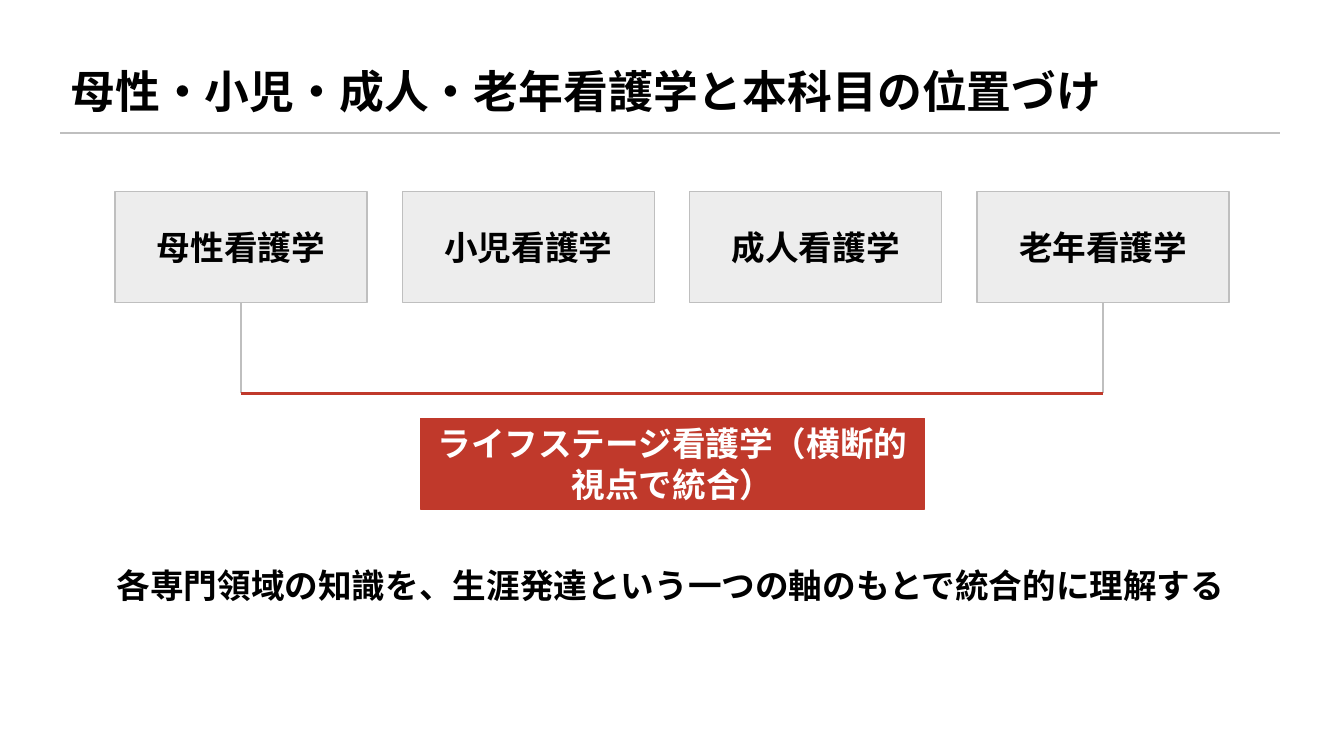
from dataclasses import dataclass

import pptx
import pptx.dml.color
import pptx.enum.shapes
import pptx.enum.text
import pptx.oxml
import pptx.oxml.ns
import pptx.util
from pptx.util import Inches


@dataclass(frozen=True)
class Theme:
    font: str = "Noto Sans CJK JP"
    ink: str = "000000"
    paper: str = "FFFFFF"
    panel: str = "EDEDED"
    rule: str = "BFBFBF"
    accent: str = "C0392B"
    title_size: int = 32
    body_size: int = 24
    thin: int = 1
    thick: int = 2


THEME = Theme()
FIELDS = ["母性看護学", "小児看護学", "成人看護学", "老年看護学"]
FIELD_LEFT, FIELD_TOP = 1.14, 1.9
FIELD_WIDTH, FIELD_HEIGHT = 2.5, 1.1
FIELD_STEP = 2.85
BRACKET_Y = 3.9


def rgb(value):
    return pptx.dml.color.RGBColor.from_string(value)


def write_text(shape, text, size=THEME.body_size, color=THEME.ink, centred=True):
    frame = shape.text_frame
    frame.word_wrap = True
    frame.vertical_anchor = pptx.enum.text.MSO_ANCHOR.MIDDLE
    para = frame.paragraphs[0]
    align = pptx.enum.text.PP_ALIGN
    para.alignment = align.CENTER if centred else align.LEFT
    span = para.add_run()
    span.text = text
    span.font.name = THEME.font
    span.font.size = pptx.util.Pt(size)
    span.font.bold = True
    span.font.color.rgb = rgb(color)
    east_asian = pptx.oxml.parse_xml(
        f'<a:ea {pptx.oxml.ns.nsdecls("a")} typeface="{THEME.font}"/>'
    )
    span.font._element.append(east_asian)


def add_label(page, left, top, width, height, text, **style):
    box = page.shapes.add_textbox(
        Inches(left), Inches(top), Inches(width), Inches(height)
    )
    write_text(box, text, **style)


def add_panel(page, left, top, width, height, text, fill, line, **style):
    panel = page.shapes.add_shape(
        pptx.enum.shapes.MSO_SHAPE.RECTANGLE,
        Inches(left), Inches(top), Inches(width), Inches(height),
    )
    panel.shadow.inherit = False
    panel.fill.solid()
    panel.fill.fore_color.rgb = rgb(fill)
    panel.line.color.rgb = rgb(line)
    panel.line.width = pptx.util.Pt(THEME.thin)
    write_text(panel, text, **style)


def add_line(page, x1, y1, x2, y2, color=THEME.rule, width=THEME.thick):
    line = page.shapes.add_connector(
        pptx.enum.shapes.MSO_CONNECTOR.STRAIGHT,
        Inches(x1), Inches(y1), Inches(x2), Inches(y2),
    )
    line.line.color.rgb = rgb(color)
    line.line.width = pptx.util.Pt(width)
    line._element.spPr.append(
        pptx.oxml.parse_xml(f'<a:effectLst {pptx.oxml.ns.nsdecls("a")}/>')
    )


def add_fields(page):
    for index, field in enumerate(FIELDS):
        add_panel(page, FIELD_LEFT + index * FIELD_STEP, FIELD_TOP,
                  FIELD_WIDTH, FIELD_HEIGHT, field, THEME.panel, THEME.rule)


def add_bracket(page):
    first = FIELD_LEFT + FIELD_WIDTH / 2
    last = first + (len(FIELDS) - 1) * FIELD_STEP
    for x in (first, last):
        add_line(page, x, FIELD_TOP + FIELD_HEIGHT, x, BRACKET_Y)
    add_line(page, first, BRACKET_Y, last, BRACKET_Y, color=THEME.accent)


def main():
    deck = pptx.Presentation()
    deck.slide_width, deck.slide_height = Inches(13.33), Inches(7.5)
    page = deck.slides.add_slide(deck.slide_layouts[6])
    page.background.fill.solid()
    page.background.fill.fore_color.rgb = rgb(THEME.paper)

    add_label(page, 0.6, 0.45, 12.1, 0.9,
              "母性・小児・成人・老年看護学と本科目の位置づけ",
              size=THEME.title_size, centred=False)
    add_line(page, 0.6, 1.32, 12.7, 1.32, width=THEME.thin)
    add_fields(page)
    add_bracket(page)
    add_panel(page, 4.17, 4.15, 5, 0.9,
              "ライフステージ看護学（横断的視点で統合）",
              THEME.accent, THEME.accent, color=THEME.paper)
    add_label(page, 0.9, 5.5, 11.5, 0.6,
              "各専門領域の知識を、生涯発達という一つの軸のもとで統合的に理解する")
    deck.save("out.pptx")


if __name__ == "__main__":
    main()
